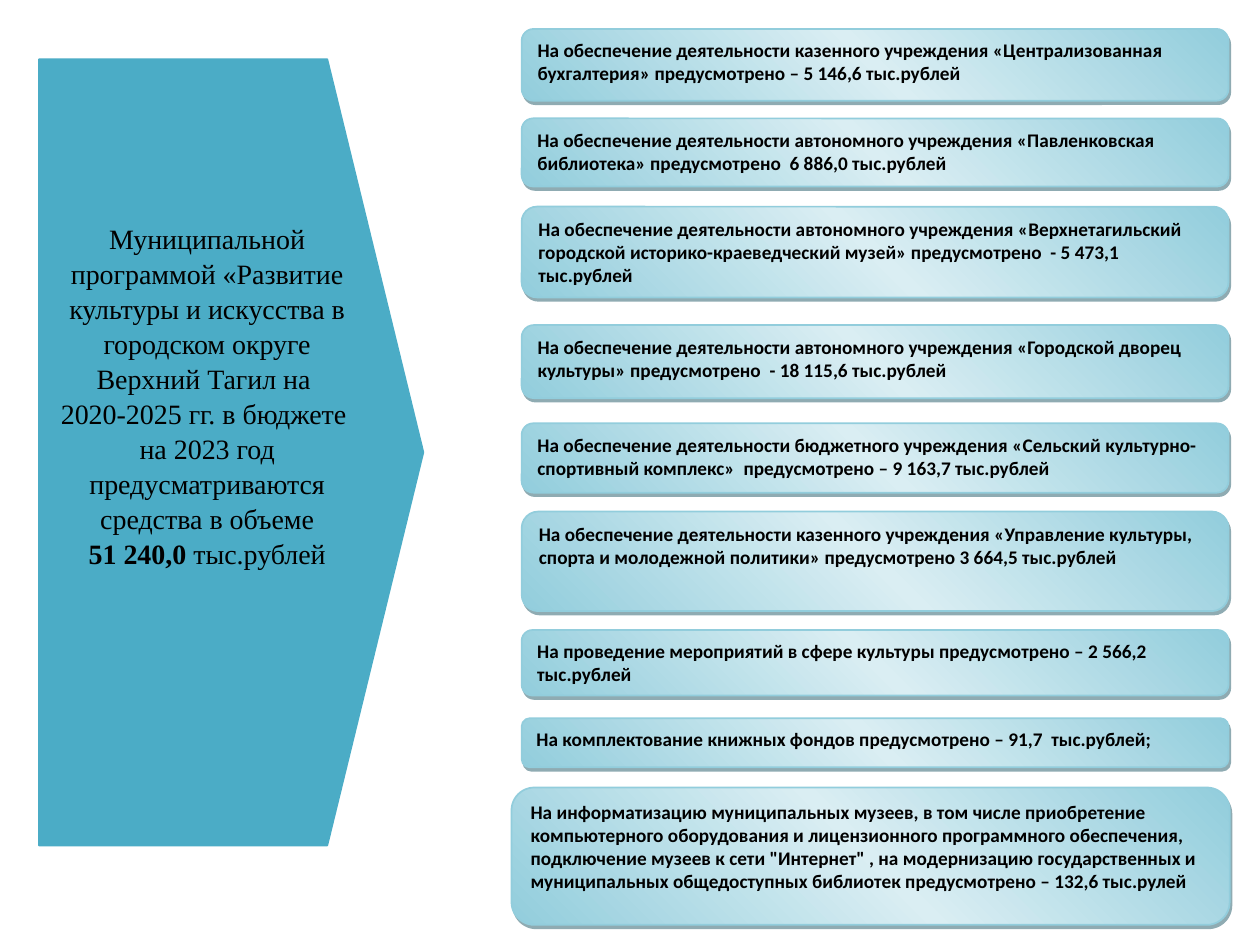
from dataclasses import dataclass

from pptx import Presentation
from pptx.dml.color import RGBColor
from pptx.enum.shapes import MSO_SHAPE as Geo
from pptx.enum.text import MSO_ANCHOR as Anchor, PP_ALIGN as Align
from pptx.oxml import parse_xml
from pptx.oxml.ns import nsdecls, qn
from pptx.util import Inches, Pt

COLS, ROWS = 1000, 750
CELL = Inches(0.01)
TEAL = RGBColor(0x4B, 0xAC, 0xC6)
AQUA = RGBColor(0x92, 0xCD, 0xDC)
PALE = RGBColor(0xDA, 0xEE, 0xF3)
DEEP = RGBColor(0x20, 0x58, 0x67)
BLACK = RGBColor(0, 0, 0)


@dataclass
class Item:
    """One line of the budget: its place in grid rows and its wording."""
    row: int
    high: int
    text: str
    col: int = 414
    wide: int = 561


ITEMS = [
    Item(23, 57, "На обеспечение деятельности казенного учреждения «Централизованная "
         "бухгалтерия» предусмотрено – 5 146,6 тыс.рублей"),
    Item(94, 54, "На обеспечение деятельности автономного учреждения «Павленковская "
         "библиотека» предусмотрено  6 886,0 тыс.рублей"),
    Item(164, 72, "На обеспечение деятельности автономного учреждения «Верхнетагильский "
         "городской историко-краеведческий музей» предусмотрено  - 5 473,1 тыс.рублей"),
    Item(258, 58, "На обеспечение деятельности автономного учреждения «Городской дворец "
         "культуры» предусмотрено  - 18 115,6 тыс.рублей"),
    Item(336, 55, "На обеспечение деятельности бюджетного учреждения «Сельский "
         "культурно-спортивный комплекс»  предусмотрено – 9 163,7 тыс.рублей"),
    Item(406, 79, "На обеспечение деятельности казенного учреждения «Управление культуры, "
         "спорта и молодежной политики» предусмотрено 3 664,5 тыс.рублей"),
    Item(500, 52, "На проведение мероприятий в сфере культуры предусмотрено – 2 566,2 "
         "тыс.рублей"),
    Item(570, 39, "На комплектование книжных фондов предусмотрено – 91,7  тыс.рублей;"),
    Item(625, 109, "На информатизацию муниципальных музеев, в том числе приобретение "
         "компьютерного оборудования и лицензионного программного обеспечения, "
         "подключение музеев к сети \"Интернет\" , на модернизацию государственных и "
         "муниципальных общедоступных библиотек предусмотрено – 132,6 тыс.рулей",
         406, 570),
]

# Each paragraph is a list of (text, bold) runs
GOAL = [
    [("Муниципальной программой «Развитие культуры и искусства в городском округе "
      "Верхний Тагил на ", False)],
    [("2020-2025 гг. в бюджете ", False)],
    [("на 2023 год предусматриваются средства в объеме", False)],
    [("51 240,0 ", True), ("тыс.рублей", False)],
]


def add_shape(slide, kind: Geo, col: int, row: int, wide: int, high: int,
              edge: RGBColor, width: float):
    shape = slide.shapes.add_shape(kind, *(n * CELL for n in (col, row, wide, high)))
    shape.line.color.rgb = edge
    shape.line.width = Pt(width)
    shape.shadow.inherit = False
    frame = shape.text_frame
    frame.word_wrap = True
    frame.vertical_anchor = Anchor.TOP
    return shape


def set_font(font, name: str, size: float) -> None:
    font.name = name
    font.size = Pt(size)
    font.color.rgb = BLACK


def shade(shape) -> None:
    """Give a diagonal three-stop gradient and a soft-coloured drop shadow."""
    shape.fill.gradient()
    shape.fill.gradient_angle = 45
    props = shape._element.spPr
    stops = props.find(qn("a:gradFill")).find(qn("a:gsLst"))
    for stop in list(stops):
        stops.remove(stop)
    for share, color in ((0, AQUA), (50, PALE), (100, AQUA)):
        stops.append(parse_xml(
            f'<a:gs {nsdecls("a")} pos="{share * 1000}"><a:srgbClr val="{color}"/></a:gs>'))
    props.find(qn("a:effectLst")).append(parse_xml(
        f'<a:outerShdw {nsdecls("a")} dist="{Pt(2.2)}" dir="{63 * 60000}" '
        f'algn="ctr" rotWithShape="0"><a:srgbClr val="{DEEP}">'
        '<a:alpha val="50000"/></a:srgbClr></a:outerShdw>'))


def add_goal(slide) -> None:
    arrow = add_shape(slide, Geo.PENTAGON, 31, 47, 305, 624, TEAL, 10 / 10)
    arrow.adjustments[0] = 0.25
    arrow.fill.solid()
    arrow.fill.fore_color.rgb = TEAL
    frame = arrow.text_frame
    frame.margin_top = 128 * CELL
    frame.margin_left = frame.margin_right = 15 * CELL
    for i, runs in enumerate(GOAL):
        para = frame.paragraphs[0] if i == 0 else frame.add_paragraph()
        para.alignment = Align.CENTER
        para.line_spacing = 1.04
        set_font(para.font, "Times New Roman", 16)
        for text, bold in runs:
            run = para.add_run()
            run.text = text
            run.font.bold = bold


def add_item(slide, item: Item) -> None:
    box = add_shape(slide, Geo.FLOWCHART_ALTERNATE_PROCESS, item.col, item.row,
                    item.wide, item.high, AQUA, 1)
    shade(box)
    para = box.text_frame.paragraphs[0]
    para.text = item.text
    para.alignment = Align.LEFT
    para.space_after = Pt(10)
    set_font(para.font, "Calibri", 11)
    para.font.bold = True


def main() -> None:
    deck = Presentation()
    deck.slide_width, deck.slide_height = COLS * CELL, ROWS * CELL
    slide = deck.slides.add_slide(deck.slide_layouts[6])
    add_goal(slide)
    for item in ITEMS:
        add_item(slide, item)
    deck.save("out.pptx")


if __name__ == "__main__":
    main()
